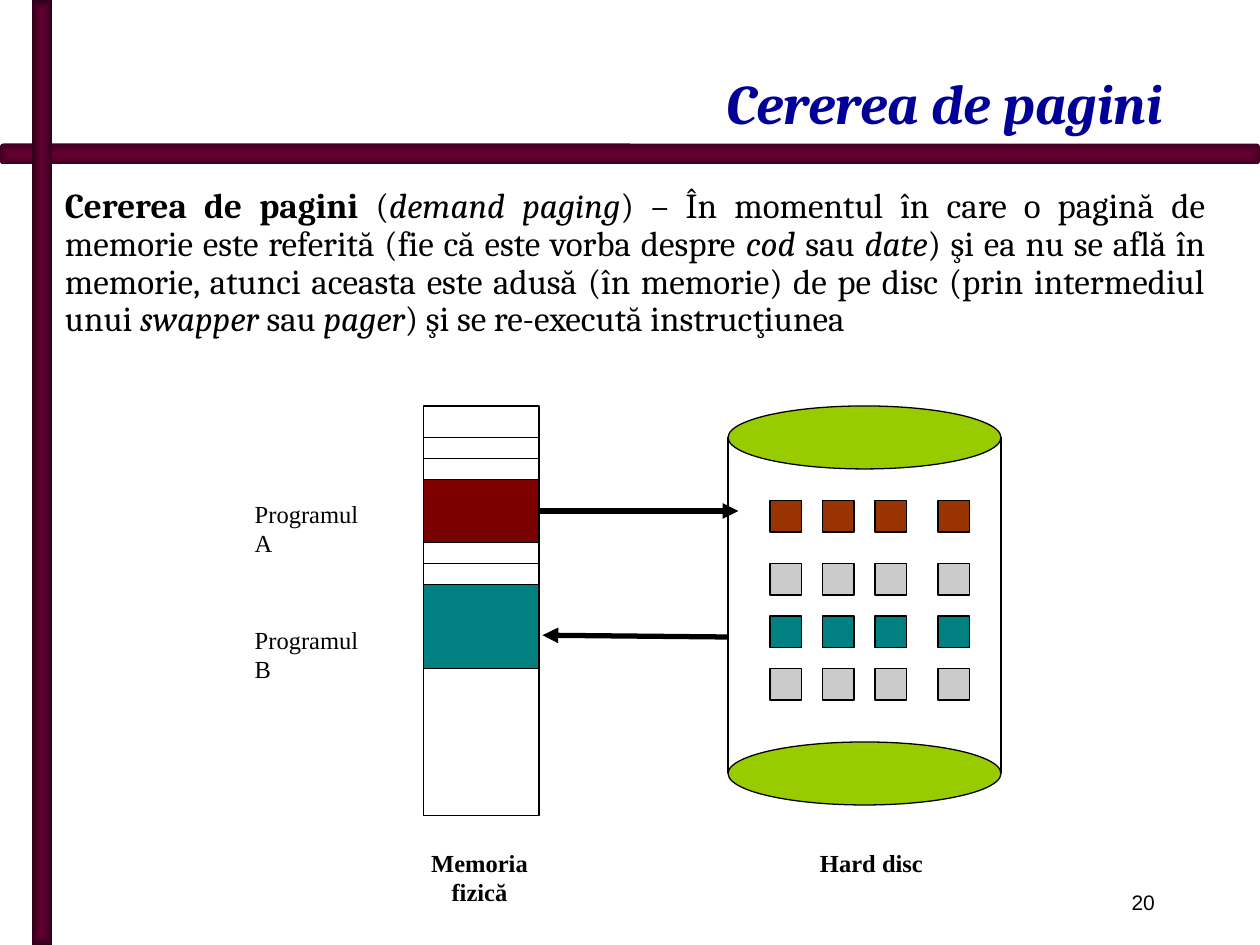
from lxml import etree
from pptx import Presentation
from pptx.dml.color import RGBColor
from pptx.enum.shapes import MSO_CONNECTOR, MSO_SHAPE
from pptx.enum.text import MSO_ANCHOR, MSO_AUTO_SIZE, PP_ALIGN
from pptx.oxml.ns import qn
from pptx.util import Pt

RECT, ROUNDED, OVAL = MSO_SHAPE.RECTANGLE, MSO_SHAPE.ROUNDED_RECTANGLE, MSO_SHAPE.OVAL
LEFT, CENTER, RIGHT, JUSTIFY = PP_ALIGN.LEFT, PP_ALIGN.CENTER, PP_ALIGN.RIGHT, PP_ALIGN.JUSTIFY
BLACK, BLUE, LIME, TEAL, BROWN, GREY = "000000", "000099", "99CC00", "008080", "993300", "CBCBCB"

LABEL = {"name": "Times New Roman", "size": Pt(14)}
CAPTION = {**LABEL, "bold": True}
BODY = {"name": "Cambria", "size": Pt(20)}
TITLE = {"name": "Cambria", "size": Pt(32), "bold": True, "italic": True}
PAGE_NUMBER = {"name": "Arial", "size": Pt(12)}

BOLD, ITALIC, PLAIN = {"bold": True}, {"italic": True}, {}
DEFINITION = [
    ("Cererea de pagini", BOLD), (" (", PLAIN), ("demand paging", ITALIC),
    (") – În momentul în care o pagină de memorie este referită "
     "(fie că este vorba despre ", PLAIN),
    ("cod ", ITALIC), ("sau ", PLAIN), ("date", ITALIC),
    (") şi ea nu se află în memorie, atunci aceasta este adusă (în memorie) "
     "de pe disc (prin intermediul unui ", PLAIN),
    ("swapper", ITALIC), (" sau ", PLAIN), ("pager", ITALIC),
    (") şi se re-execută instrucţiunea", PLAIN),
]

# Memory column: a header strip above page frames of equal height
MEM_LEFT, MEM_TOP, MEM_WIDTH, MEM_HEIGHT = 242, 232, 66, 234
FRAME_TOP, FRAME_HEIGHT, FRAME_LINES = 250, 12, 12
# Disc: two ovals joined by straight sides
DISC_LEFT, DISC_TOP, DISC_WIDTH, DISC_HEIGHT, OVAL_HEIGHT = 416, 232, 156, 228, 36
SECTOR_COLUMNS, SECTOR_SIZE = (440, 470, 500, 536), 18
SECTOR_ROWS = ((286, BROWN), (322, GREY), (352, TEAL), (382, GREY))


def rgb(value):
    return RGBColor.from_string(value)


def add_box(slide, kind, left, top, width, height, fill=None, outlined=True):
    box = slide.shapes.add_shape(kind, Pt(left), Pt(top), Pt(width), Pt(height))
    box.shadow.inherit = False
    if fill:
        box.fill.solid()
        box.fill.fore_color.rgb = rgb(fill)
    else:
        box.fill.background()
    if outlined:
        box.line.color.rgb = rgb(BLACK)
        box.line.width = Pt(0.75)
    else:
        box.line.fill.background()
    return box


def set_gradient(box, start, end):
    box.fill.gradient()
    box.fill.gradient_angle = 270
    for stop, color in zip(box.fill.gradient_stops, (start, end)):
        stop.color.rgb = rgb(color)


def add_bar(slide, kind, left, top, width, height, edge):
    """Decorative bar shaded from its middle towards its edges."""
    bar = add_box(slide, kind, left, top, width, height, outlined=False)
    set_gradient(bar, "660033", edge)
    linear = bar._element.spPr.find(qn("a:gradFill")).find(qn("a:lin"))
    radial = etree.Element(qn("a:path"), path="shape")
    etree.SubElement(radial, qn("a:fillToRect"), l="50000", t="50000", r="50000", b="50000")
    linear.getparent().replace(linear, radial)


def add_line(slide, x1, y1, x2, y2, weight=0.75, arrow=False):
    line = slide.shapes.add_connector(
        MSO_CONNECTOR.STRAIGHT, Pt(x1), Pt(y1), Pt(x2), Pt(y2))
    line.line.color.rgb = rgb(BLACK)
    line.line.width = Pt(weight)
    if arrow:
        etree.SubElement(line.line._get_or_add_ln(), qn("a:tailEnd"), type="triangle")
    etree.SubElement(line._element.spPr, qn("a:effectLst"))
    return line


def write(paragraph, runs, style, color=BLACK):
    for text, emphasis in runs:
        run = paragraph.add_run()
        run.text = text
        for key, value in {**style, **emphasis}.items():
            setattr(run.font, key, value)
        run.font.color.rgb = rgb(color)


def add_text(slide, left, top, width, height, runs, style, align=LEFT):
    frame = slide.shapes.add_textbox(Pt(left), Pt(top), Pt(width), Pt(height)).text_frame
    frame.word_wrap = True
    paragraph = frame.paragraphs[0]
    paragraph.alignment = align
    write(paragraph, runs, style)
    return paragraph


def set_title(slide, text):
    title = slide.shapes.title
    title.left, title.top, title.width, title.height = Pt(60), Pt(12), Pt(612), Pt(69)
    frame = title.text_frame
    frame.auto_size = MSO_AUTO_SIZE.NONE
    frame.vertical_anchor = MSO_ANCHOR.BOTTOM
    frame.paragraphs[0].alignment = RIGHT
    write(frame.paragraphs[0], [(text, PLAIN)], TITLE, BLUE)


def add_memory(slide):
    """Draw the memory column and return the block of program A."""
    add_box(slide, RECT, MEM_LEFT, MEM_TOP, MEM_WIDTH, MEM_HEIGHT)
    for index in range(FRAME_LINES):
        y = FRAME_TOP + index * FRAME_HEIGHT
        add_line(slide, MEM_LEFT, y, MEM_LEFT + MEM_WIDTH, y)
    program_a, program_b = [
        add_box(slide, RECT, MEM_LEFT, FRAME_TOP + first * FRAME_HEIGHT,
                MEM_WIDTH, frames * FRAME_HEIGHT, TEAL)
        for first, frames in ((2, 3), (7, 4))]
    set_gradient(program_a, "800000", "780000")
    return program_a


def add_disc(slide):
    for top in (DISC_TOP, DISC_TOP + DISC_HEIGHT - OVAL_HEIGHT):
        add_box(slide, OVAL, DISC_LEFT, top, DISC_WIDTH, OVAL_HEIGHT, LIME)
    for x in (DISC_LEFT, DISC_LEFT + DISC_WIDTH):
        add_line(slide, x, DISC_TOP + OVAL_HEIGHT / 2,
                 x, DISC_TOP + DISC_HEIGHT - OVAL_HEIGHT / 2)
    for top, color in SECTOR_ROWS:
        for left in SECTOR_COLUMNS:
            add_box(slide, RECT, left, top, SECTOR_SIZE, SECTOR_SIZE, color)


def main():
    prs = Presentation()
    prs.slide_width, prs.slide_height = Pt(720), Pt(540)
    slide = prs.slides.add_slide(prs.slide_layouts[5])

    # Frame bars, title and page number
    add_bar(slide, ROUNDED, 0, 82, 720, 12, "410020")
    add_bar(slide, RECT, 18, 0, 12, 540, "2F0018")
    set_title(slide, "Cererea de pagini")
    add_text(slide, 54, 505, 613, 22, [("20", PLAIN)], PAGE_NUMBER, RIGHT)

    # Definition
    definition = add_text(slide, 30, 104, 666, 95, DEFINITION, BODY, JUSTIFY)
    definition.line_spacing = 0.9

    # Memory, disc and the transfers between them
    program_a = add_memory(slide)
    add_disc(slide)
    swap_out = add_line(slide, 308, 292, 422, 292, 3, arrow=True)
    swap_out.begin_connect(program_a, 3)
    add_line(slide, DISC_LEFT, 364, 310, 363, 3, arrow=True)

    # Labels
    for text, top in (("Programul A", 281.5), ("Programul B", 353.5)):
        add_text(slide, 138.5, top, 80, 41, [(text, PLAIN)], LABEL)
    for text, left, width in (("Memoria fizică", 229, 90), ("Hard disc", 453, 90)):
        add_text(slide, left, 481, width, 41, [(text, PLAIN)], CAPTION, CENTER)

    prs.save("out.pptx")


if __name__ == "__main__":
    main()
